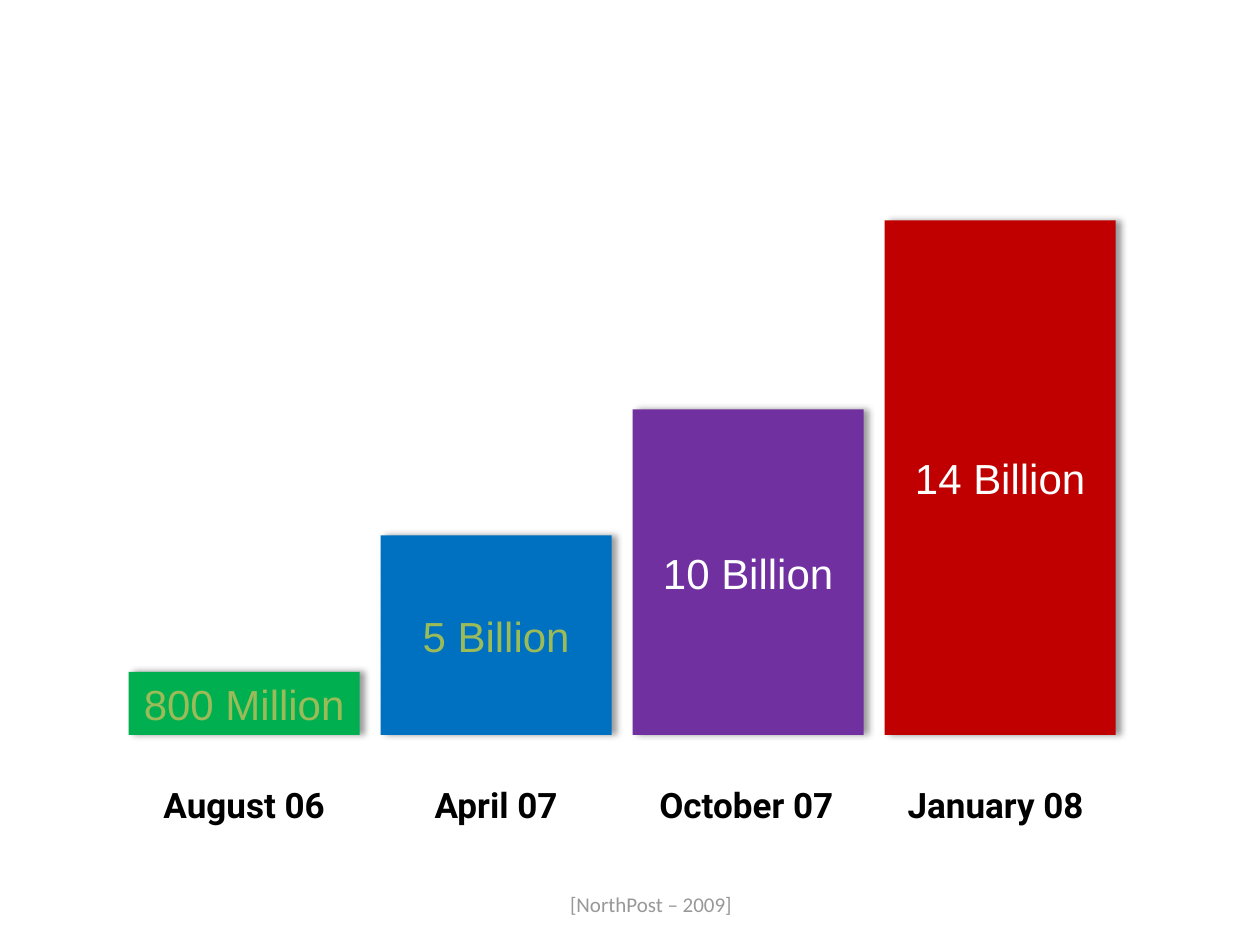
from lxml import etree
from pptx import Presentation
from pptx import util as u
from pptx.dml.color import RGBColor
from pptx.enum import shapes, text
from pptx.oxml.ns import qn

BLACK = RGBColor(0x00, 0x00, 0x00)
WHITE = RGBColor(0xFF, 0xFF, 0xFF)
GRAY = RGBColor(0x98, 0x98, 0x98)
OLIVE = RGBColor(0x9B, 0xBB, 0x59)
GREEN = RGBColor(0x00, 0xB0, 0x50)
BLUE = RGBColor(0x00, 0x70, 0xC0)
PURPLE = RGBColor(0x70, 0x30, 0xA0)
RED = RGBColor(0xC0, 0x00, 0x00)

FIRST_LEFT, STEP, BAR_WIDTH, BASELINE = 73.5, 144, 132, 420
LABEL_TOP, LABEL_HEIGHT = 444, 31.5
TOP, MIDDLE = text.MSO_ANCHOR.TOP, text.MSO_ANCHOR.MIDDLE

# date, amount, bar height, fill, amount colour, anchor, label inset, label width, wrap
COLUMNS = [
    ("August 06", "800 Million", 36, GREEN, OLIVE, TOP, 0, 132, True),
    ("April 07", "5 Billion", 114, BLUE, OLIVE, MIDDLE, 0, 132, True),
    ("October 07", "10 Billion", 186, PURPLE, WHITE, MIDDLE, 0, 130, True),
    ("January 08", "14 Billion", 294, RED, WHITE, MIDDLE, 3.5, 120, False),
]


class SlideBuilder:
    def __init__(self, slide):
        self.slide = slide

    def add_words(self, frame, words, font, size, color, bold=False):
        paragraph = frame.paragraphs[0]
        paragraph.alignment = text.PP_ALIGN.CENTER
        run = paragraph.add_run()
        run.text = words
        run.font.name = font
        run.font.size = u.Pt(size)
        run.font.bold = bold
        run.font.color.rgb = color

    def cast_shadow(self, shape):
        """Add a soft black shadow falling to the right."""
        shape.shadow.inherit = False
        effects = shape.element.spPr.find(qn("a:effectLst"))
        shadow = etree.SubElement(
            effects, qn("a:outerShdw"), blurRad=str(u.Pt(4)),
            dist=str(u.Pt(3)), dir="0", algn="l", rotWithShape="0")
        color = etree.SubElement(shadow, qn("a:srgbClr"), val="000000")
        etree.SubElement(color, qn("a:alpha"), val="40000")

    def bar(self, left, height, fill, amount, color, anchor):
        """Add a bar that stands on the common baseline."""
        shape = self.slide.shapes.add_shape(
            shapes.MSO_SHAPE.RECTANGLE, u.Pt(left), u.Pt(BASELINE - height),
            u.Pt(BAR_WIDTH), u.Pt(height))
        shape.fill.solid()
        shape.fill.fore_color.rgb = fill
        shape.line.fill.background()
        self.cast_shadow(shape)
        shape.text_frame.vertical_anchor = anchor
        self.add_words(shape.text_frame, amount, "Arial", 24, color)

    def label(self, left, top, width, height, words, font, size, color,
              bold=False, wrap=True):
        box = self.slide.shapes.add_textbox(
            u.Pt(left), u.Pt(top), u.Pt(width), u.Pt(height))
        frame = box.text_frame
        frame.word_wrap = wrap
        frame.auto_size = text.MSO_AUTO_SIZE.SHAPE_TO_FIT_TEXT
        self.add_words(frame, words, font, size, color, bold)


def main():
    presentation = Presentation()
    presentation.slide_width, presentation.slide_height = u.Pt(720), u.Pt(540)
    slide = presentation.slides.add_slide(presentation.slide_layouts[6])
    builder = SlideBuilder(slide)

    builder.label(312, 506, 120, 21.8, "[NorthPost – 2009]",
                  "Calibri", 12, GRAY, wrap=False)
    for index, column in enumerate(COLUMNS):
        date, amount, height, fill, color, anchor, inset, width, wrap = column
        left = FIRST_LEFT + index * STEP
        builder.bar(left, height, fill, amount, color, anchor)
        builder.label(left + inset, LABEL_TOP, width, LABEL_HEIGHT, date,
                      "Roboto", 20, BLACK, bold=True, wrap=wrap)

    presentation.save("out.pptx")


if __name__ == "__main__":
    main()
